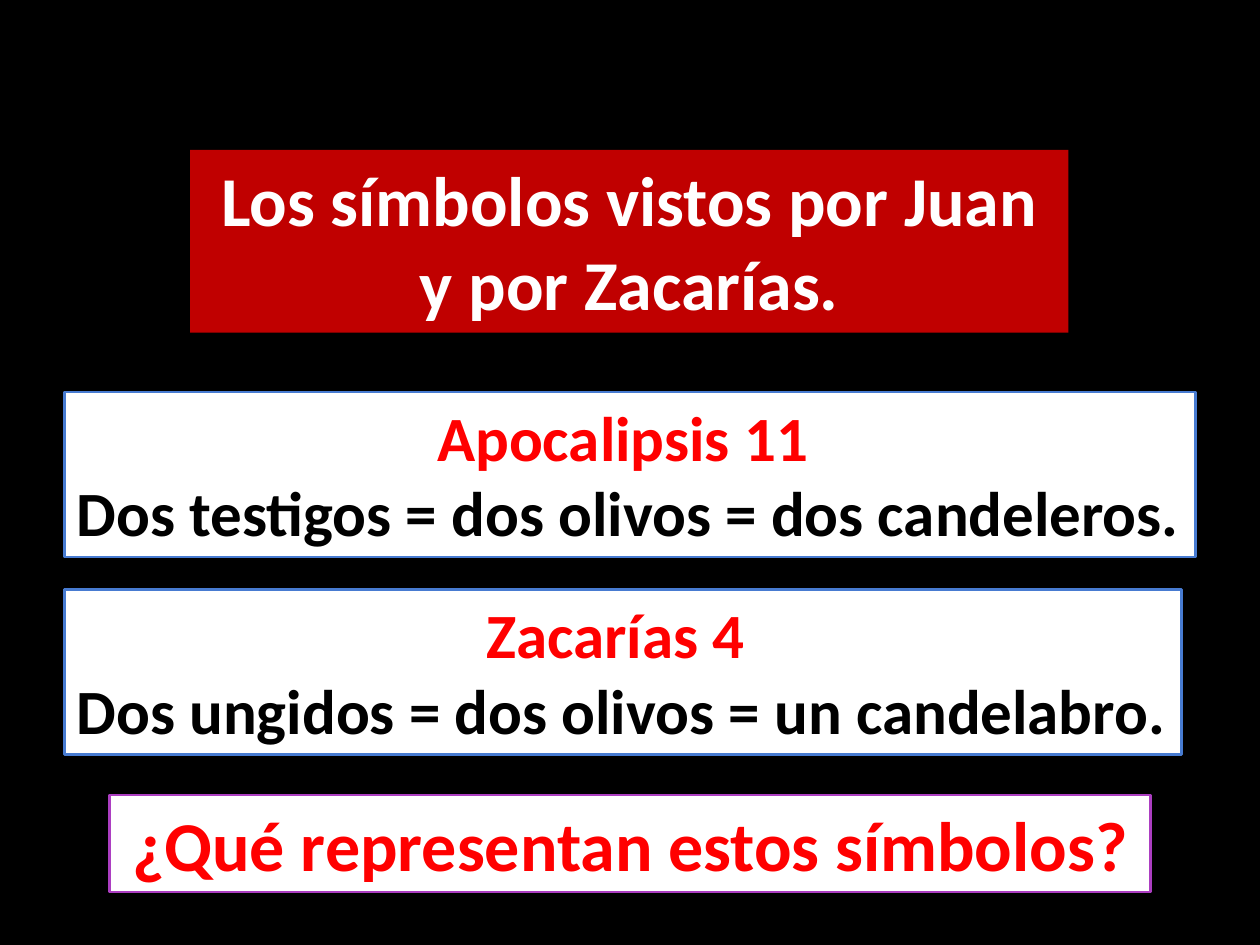
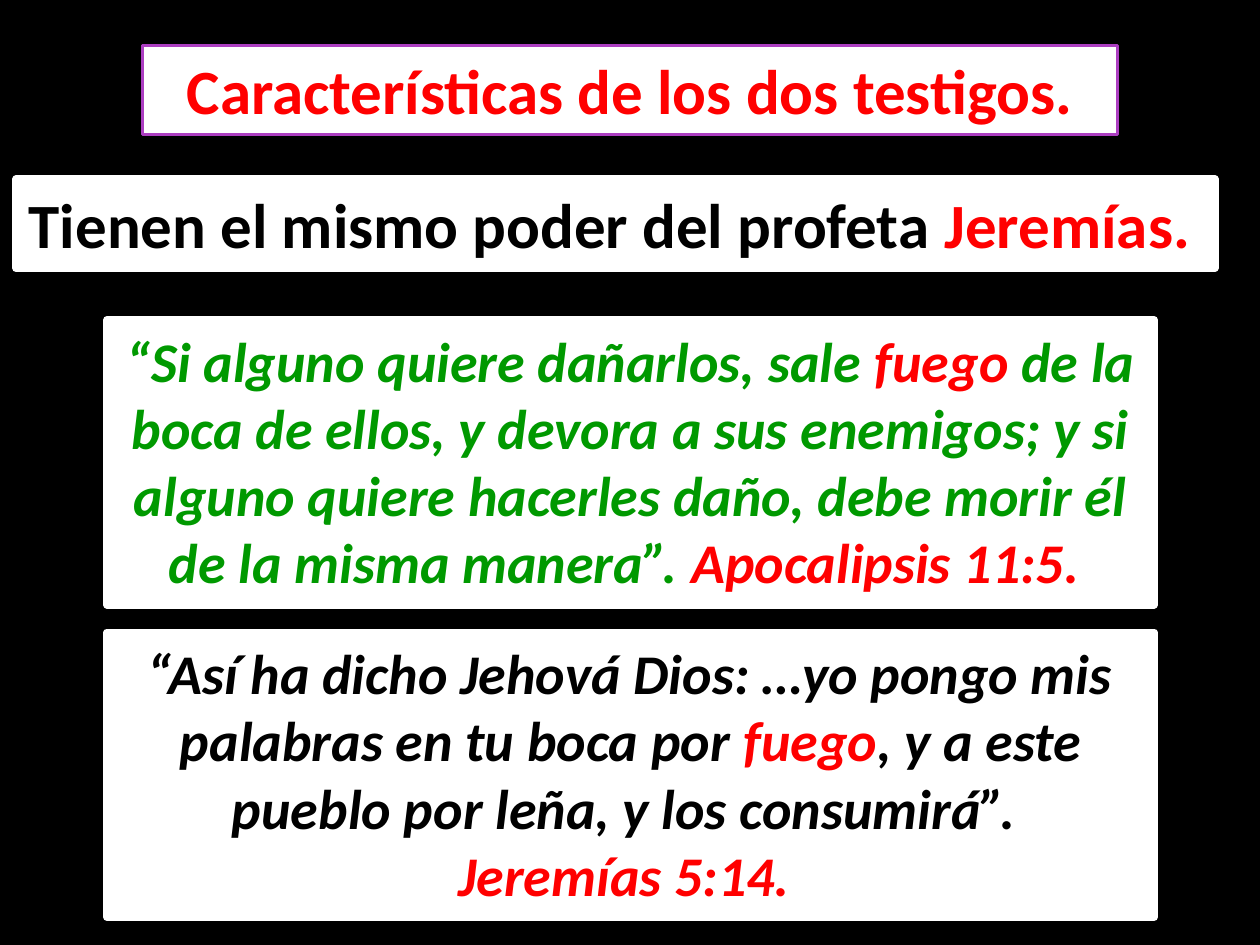
from pptx import Presentation
from pptx.dml.color import RGBColor
from pptx.enum.shapes import MSO_SHAPE
from pptx.enum.text import MSO_ANCHOR, MSO_AUTO_SIZE, PP_ALIGN
from pptx.util import Inches, Pt

RECTANGLE = MSO_SHAPE.RECTANGLE
TOP = MSO_ANCHOR.TOP
GROW = MSO_AUTO_SIZE.SHAPE_TO_FIT_TEXT
LEFT, CENTER = PP_ALIGN.LEFT, PP_ALIGN.CENTER

FONT = "Calibri"
BLACK, WHITE, RED, GREEN = "000000", "FFFFFF", "FF0000", "009900"
TITLE_RED, BLUE, PURPLE = "C00000", "477BD1", "AC3EC1"
THIN, THICK = 1.5, 4.5


def color(hex_code):
    return RGBColor.from_string(hex_code)


def add_slide(prs):
    """Add a blank slide with the shared black background."""
    slide = prs.slides.add_slide(prs.slide_layouts[6])
    slide.background.fill.solid()
    slide.background.fill.fore_color.rgb = color(BLACK)
    return slide


def add_panel(slide, box, lines, size, fill=WHITE, border=None,
              border_width=THIN, italic=False):
    """Draw a panel; each line is (alignment, [(text, colour), ...])."""
    panel = slide.shapes.add_shape(RECTANGLE, *map(Inches, box))
    panel.shadow.inherit = False
    panel.fill.solid()
    panel.fill.fore_color.rgb = color(fill)
    if border:
        panel.line.color.rgb = color(border)
        panel.line.width = Pt(border_width)
    else:
        panel.line.fill.background()

    frame = panel.text_frame
    frame.word_wrap = True
    frame.auto_size = GROW
    frame.vertical_anchor = TOP
    for index, (alignment, pieces) in enumerate(lines):
        paragraph = frame.add_paragraph() if index else frame.paragraphs[0]
        paragraph.alignment = alignment
        paragraph.font.name = FONT
        paragraph.font.size = Pt(size)
        paragraph.font.bold = True
        paragraph.font.italic = italic
        for text, text_color in pieces:
            run = paragraph.add_run()
            run.text = text
            run.font.color.rgb = color(text_color)


def add_heading(slide, box, text, size):
    """Red heading in a purple frame."""
    add_panel(slide, box, [(CENTER, [(text, RED)])], size, border=PURPLE)


def add_equation(slide, box, passage, equation):
    """Bible passage above the symbols it equates."""
    lines = [(CENTER, [(passage, RED)]), (LEFT, [(equation, BLACK)])]
    add_panel(slide, box, lines, 36, border=BLUE)


def add_quote(slide, top, lines):
    """Centred italic quotation."""
    add_panel(slide, (0.85, top, 8.31, 2.26),
              [(CENTER, pieces) for pieces in lines], 32,
              border=WHITE, border_width=THICK, italic=True)


def build_symbols(prs):
    slide = add_slide(prs)
    # Passages
    add_equation(slide, (0.51, 3.11, 8.98, 1.31), "Apocalipsis 11 ",
                 "Dos testigos = dos olivos = dos candeleros.")
    add_equation(slide, (0.51, 4.68, 8.87, 1.31), "Zacarías 4 ",
                 "Dos ungidos = dos olivos = un candelabro.")
    # Title and closing question
    title = "Los símbolos vistos por Juan y por Zacarías."
    add_panel(slide, (1.51, 1.19, 6.97, 1.45),
              [(CENTER, [(title, WHITE)])], 40, fill=TITLE_RED)
    add_heading(slide, (0.87, 6.31, 8.26, 0.77),
                "¿Qué representan estos símbolos?", 40)


def build_witnesses(prs):
    slide = add_slide(prs)
    # Heading and claim
    add_heading(slide, (1.13, 0.36, 7.74, 0.71),
                "Características de los dos testigos.", 36)
    claim = [("Tienen el mismo poder del profeta ", BLACK), ("Jeremías.", RED)]
    add_panel(slide, (0.13, 1.42, 9.51, 0.71), [(LEFT, claim)], 36,
              border=WHITE, border_width=THICK)
    # Supporting quotations
    add_quote(slide, 2.54, [[
        ("“Si alguno quiere dañarlos, sale ", GREEN),
        ("fuego ", RED),
        ("de la boca de ellos, y devora a sus enemigos; y si alguno quiere "
         "hacerles daño, debe morir él de la misma manera”. ", GREEN),
        ("Apocalipsis 11:5. ", RED),
    ]])
    add_quote(slide, 5.02, [
        [("“Así ha dicho Jehová Dios: …yo pongo mis palabras en tu boca por ",
          BLACK),
         ("fuego", RED),
         (", y a este pueblo por leña, y los consumirá”. ", BLACK)],
        [("Jeremías 5:14. ", RED)],
    ])


def main():
    prs = Presentation()
    prs.slide_width, prs.slide_height = Inches(10), Inches(7.5)
    build_symbols(prs)
    build_witnesses(prs)
    prs.save("out.pptx")


if __name__ == "__main__":
    main()
